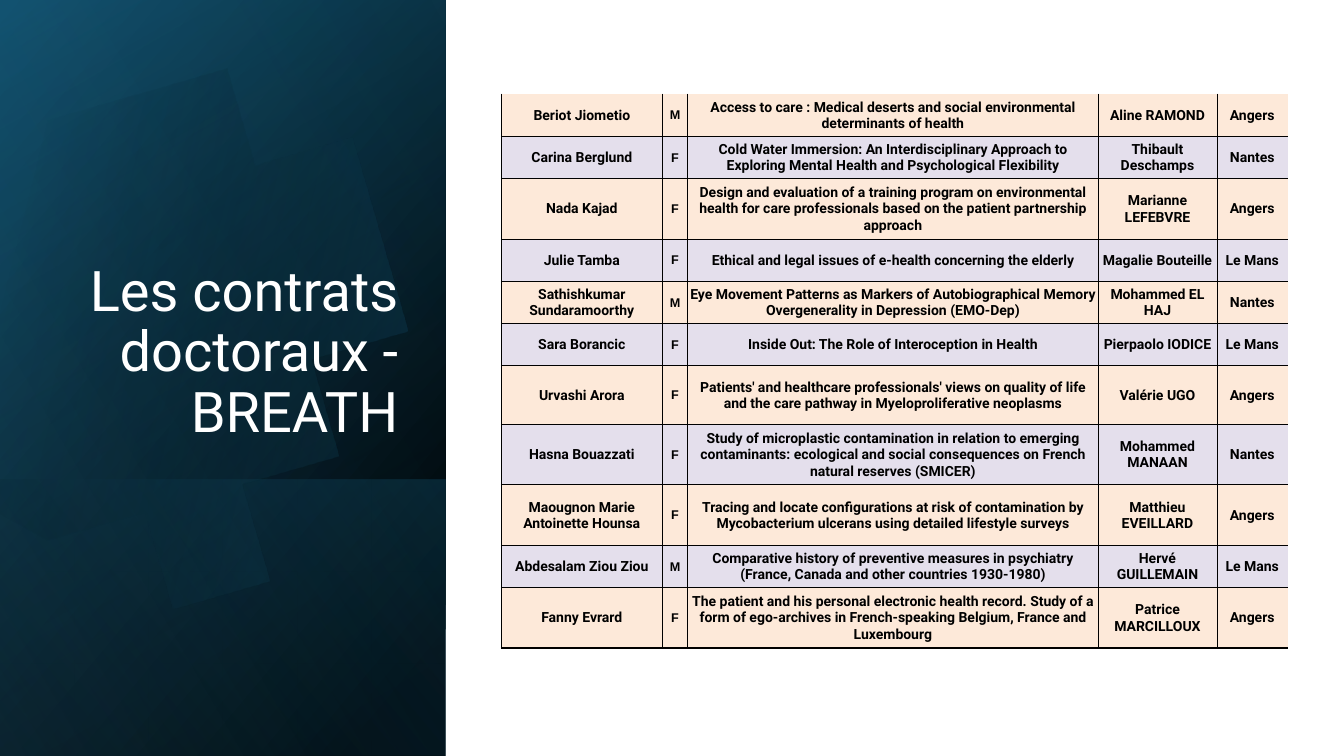
import math
from pptx import Presentation
from pptx.dml.color import RGBColor
from pptx.enum.shapes import MSO_SHAPE
from pptx.enum.text import MSO_ANCHOR, MSO_AUTO_SIZE, PP_ALIGN
from pptx.oxml.ns import qn
from pptx.util import Inches, Pt
from lxml import etree

RECT = MSO_SHAPE.RECTANGLE
MIDDLE, BOTTOM = MSO_ANCHOR.MIDDLE, MSO_ANCHOR.BOTTOM
CENTER, RIGHT = PP_ALIGN.CENTER, PP_ALIGN.RIGHT
NO_FIT = MSO_AUTO_SIZE.NONE


class Theme:
    font, mark_font = "Roboto", "Arial"
    title, body, mark = 40, 10, 9
    ink, white = "000000", "FFFFFF"
    bands = ("FDE9D9", "E4DFEC")
    navy, teal, sky = "104862", "156082", "46B1E1"
    thin, thick = 0.5, 1


# Content
TITLE = "Les contrats doctoraux - BREATH"
ROWS = [
    ("Beriot Jiometio", "M", "Access to care : Medical deserts and social environmental determinants of health",
     "Aline RAMOND", "Angers"),
    ("Carina Berglund", "F", "Cold Water Immersion: An Interdisciplinary Approach to Exploring Mental Health "
     "and Psychological Flexibility", "Thibault Deschamps", "Nantes"),
    ("Nada Kajad", "F", "Design and evaluation of a training program on environmental health for care "
     "professionals based on the patient partnership approach", "Marianne LEFEBVRE", "Angers"),
    ("Julie Tamba", "F", "Ethical and legal issues of e-health concerning the elderly",
     "Magalie Bouteille", "Le Mans"),
    ("Sathishkumar Sundaramoorthy", "M", "Eye Movement Patterns as Markers of Autobiographical Memory "
     "Overgenerality in Depression (EMO-Dep)", "Mohammed EL HAJ", "Nantes"),
    ("Sara Borancic", "F", "Inside Out: The Role of Interoception in Health", "Pierpaolo IODICE", "Le Mans"),
    ("Urvashi Arora", "F", "Patients' and healthcare professionals' views on quality of life and the care "
     "pathway in Myeloproliferative neoplasms", "Valérie UGO", "Angers"),
    ("Hasna Bouazzati", "F", "Study of microplastic contamination in relation to emerging contaminants: "
     "ecological and social consequences on French natural reserves (SMICER)", "Mohammed MANAAN", "Nantes"),
    ("Maougnon Marie Antoinette Hounsa", "F", "Tracing and locate configurations at risk of contamination by "
     "Mycobacterium ulcerans using detailed lifestyle surveys", "Matthieu EVEILLARD", "Angers"),
    ("Abdesalam Ziou Ziou", "M", "Comparative history of preventive measures in psychiatry (France, Canada and "
     "other countries 1930-1980)", "Hervé GUILLEMAIN", "Le Mans"),
    ("Fanny Evrard", "F", "The patient and his personal electronic health record. Study of a form of "
     "ego-archives in French-speaking Belgium, France and Luxembourg", "Patrice MARCILLOUX", "Angers"),
]

# Grid, in inches
WIDE, HIGH = 13.33, 7.5
SIDE = 4.42
FOOT = 2.74
TABLE = (4.97, 0.93)
COLS = (1.6, 0.25, 4.07, 1.18, 0.7)
LOW, MID, TALL = 0.42, 0.58, 0.6
HEIGHTS = (LOW, LOW, TALL, LOW, LOW, LOW, MID, TALL, TALL, LOW, TALL)

# Side panels: top, height, gradient stops (place, colour, opacity), angle
BASE = (0, HIGH, [(8, Theme.ink, 100), (100, Theme.navy, 100)], 50)
GLOW = (0, HIGH, [(0, Theme.ink, 0), (99, Theme.teal, 46)], 30)
FLOOR = (HIGH - FOOT, FOOT, [(2, Theme.teal, 29), (100, Theme.ink, 30)], 130)
SHEEN = (0, HIGH, [(0, Theme.ink, 0), (99, Theme.sky, 11)], 120)

# Disc cut off by the left edge: start, then Bézier curves, then corners
DISC_MID, DISC_TURN = (1.585, 3.345), 343.9
DISC_START = (1.49, 1.1)
DISC_ARCS = [
    ((2.46, 1.12), (3.35, 1.77), (3.63, 2.75)),
    ((3.98, 3.97), (3.28, 5.23), (2.07, 5.58)),
    ((1.31, 5.8), (0.53, 5.61), (-0.03, 5.14)),
]
DISC_EDGE = [(-0.15, 5.03), (-0.15, 1.75), (0, 1.61)]
DISC_TOP = [((0.23, 1.42), (0.5, 1.28), (0.8, 1.19)), ((1.03, 1.13), (1.26, 1.1), DISC_START)]
DISC_FILL = [(29, Theme.ink, 0), (100, Theme.teal, 43)]


def sub(node, tag, **attrs):
    return etree.SubElement(node, qn(tag), {key: str(val) for key, val in attrs.items()})


def write(frame, text, size=Theme.body, font=Theme.font, color=Theme.ink, bold=False, align=CENTER, space=None):
    para = frame.paragraphs[0]
    para.alignment, para.line_spacing = align, space
    run = para.add_run()
    run.text = text
    run.font.size, run.font.name, run.font.bold = Pt(size), font, bold
    run.font.color.rgb = RGBColor.from_string(color)


def shade(shape, stops, angle):
    shape.shadow.inherit = False
    shape.line.fill.background()
    shape.fill.gradient()
    grad = shape._element.spPr.find(qn("a:gradFill"))
    items = grad.find(qn("a:gsLst"))
    for old in list(items):
        items.remove(old)
    for place, color, alpha in stops:
        stop = sub(items, "a:gs", pos=place * 1000)
        sub(sub(stop, "a:srgbClr", val=color), "a:alpha", val=alpha * 1000)
    grad.find(qn("a:lin")).set("ang", str(angle * 60000))


def panel(shapes, top, high, stops, angle):
    # A quarter turn swaps width and height around the centre
    left, upper = (SIDE - high) / 2, top + (high - SIDE) / 2
    shape = shapes.add_shape(RECT, Inches(left), Inches(upper), Inches(high), Inches(SIDE))
    shape.rotation = 90
    shape._element.spPr.xfrm.set("flipH", "1")
    shade(shape, stops, angle)


def curve(start, arcs, steps=24):
    points = []
    for one, two, end in arcs:
        for step in range(1, steps + 1):
            t = step / steps
            u = 1 - t
            points.append(tuple(u**3 * a + 3 * u * u * t * b + 3 * u * t * t * c + t**3 * d
                                for a, b, c, d in zip(start, one, two, end)))
        start = end
    return points


def unturn(point):
    angle = math.radians(-DISC_TURN)
    x, y = point[0] - DISC_MID[0], point[1] - DISC_MID[1]
    return (DISC_MID[0] + x * math.cos(angle) - y * math.sin(angle),
            DISC_MID[1] + x * math.sin(angle) + y * math.cos(angle))


def disc(shapes):
    points = [DISC_START, *curve(DISC_START, DISC_ARCS), *DISC_EDGE, *curve(DISC_EDGE[-1], DISC_TOP)]
    first, *rest = map(unturn, points)
    form = shapes.build_freeform(*first, scale=Inches(1))
    form.add_line_segments(rest, close=True)
    shape = form.convert_to_shape()
    shape.rotation = DISC_TURN
    shade(shape, DISC_FILL, 30)


def border(cell, sides):
    props = cell._tc.get_or_add_tcPr()
    for side, width in sides.items():
        line = sub(props, f"a:ln{side}", w=Pt(width))
        if width:
            sub(sub(line, "a:solidFill"), "a:srgbClr", val=Theme.ink)
        else:
            sub(line, "a:noFill")


def grid(shapes):
    box = map(Inches, (*TABLE, sum(COLS), sum(HEIGHTS)))
    table = shapes.add_table(len(ROWS), len(COLS), *box).table
    table.first_row = table.horz_banding = False
    table._tbl.tblPr.find(qn("a:tableStyleId")).text = "{2D5ABB26-0587-4C30-8999-92F81FD0307C}"
    for col, width in zip(table.columns, COLS):
        col.width = Inches(width)
    last_row, last_col = len(ROWS) - 1, len(COLS) - 1
    for r, (row, high) in enumerate(zip(ROWS, HEIGHTS)):
        table.rows[r].height = Inches(high)
        for c, text in enumerate(row):
            cell = table.cell(r, c)
            # Open at the top and on the right
            border(cell, {"L": Theme.thin, "R": Theme.thin if c < last_col else 0,
                          "T": Theme.thin if r else 0, "B": Theme.thin if r < last_row else Theme.thick})
            cell.fill.solid()
            cell.fill.fore_color.rgb = RGBColor.from_string(Theme.bands[r % 2])
            cell.vertical_anchor = MIDDLE
            cell.margin_left = cell.margin_right = cell.margin_top = Inches(0.01)
            cell.margin_bottom = 0
            style = {"size": Theme.mark, "font": Theme.mark_font} if c == 1 else {}
            write(cell.text_frame, text, bold=True, **style)


def main():
    deck = Presentation()
    deck.slide_width, deck.slide_height = Inches(WIDE), Inches(HIGH)
    slide = deck.slides.add_slide(deck.slide_layouts[5])
    shapes = slide.shapes

    # Side background
    for part in (BASE, GLOW, FLOOR):
        panel(shapes, *part)
    disc(shapes)
    panel(shapes, *SHEEN)

    # Title, in front of the panels
    title = shapes.title
    title.left, title.top, title.width, title.height = map(Inches, (0.64, 1.84, 3.41, 2.62))
    shapes._spTree.append(title._element)
    frame = title.text_frame
    frame.word_wrap, frame.auto_size, frame.vertical_anchor = True, NO_FIT, BOTTOM
    write(frame, TITLE, size=Theme.title, color=Theme.white, align=RIGHT, space=0.9)

    # Contracts
    grid(shapes)
    deck.save("out.pptx")


if __name__ == "__main__":
    main()
